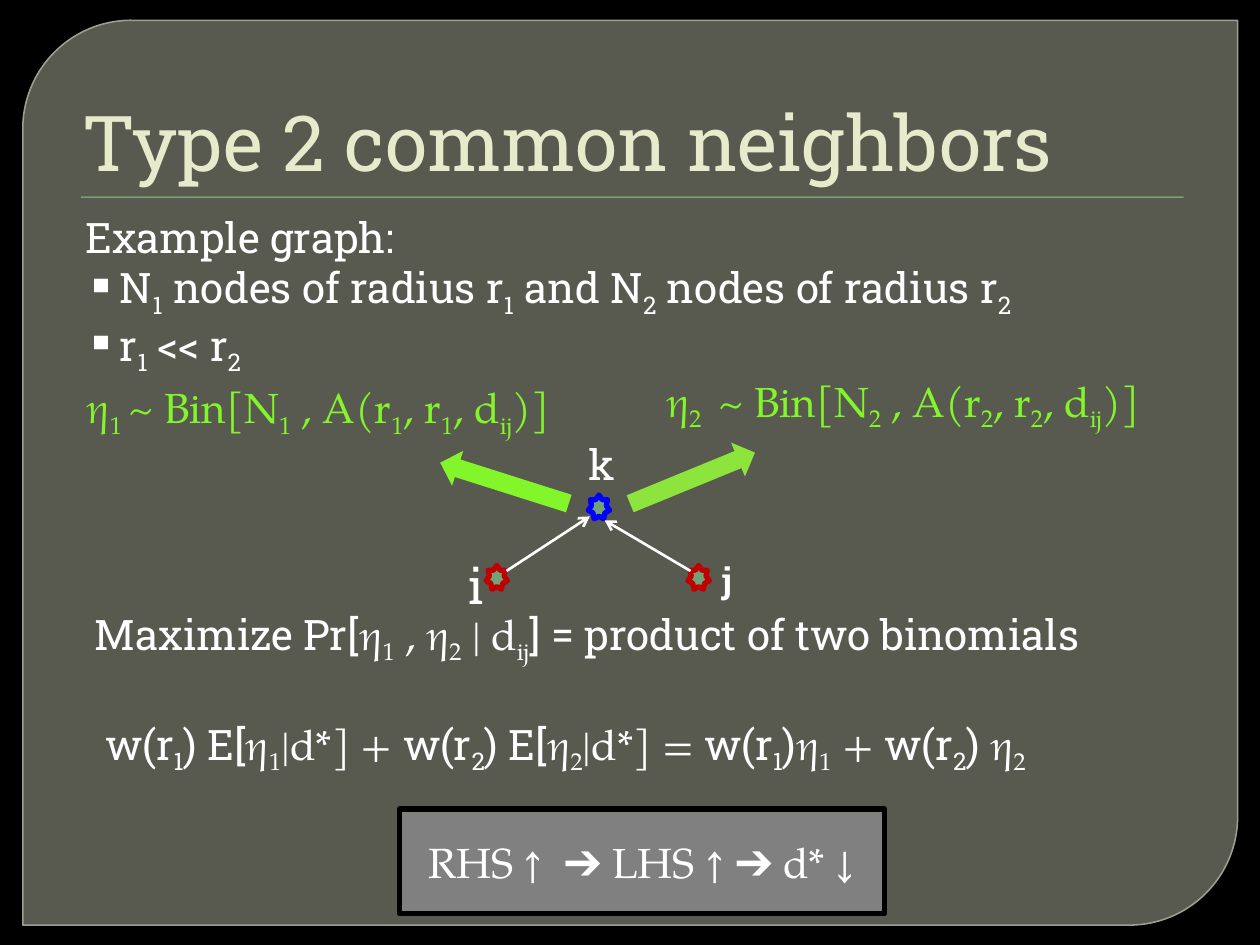
from lxml import etree
from pptx import Presentation
from pptx.dml.color import RGBColor
from pptx.enum.shapes import MSO_CONNECTOR, MSO_SHAPE
from pptx.enum.text import MSO_ANCHOR, PP_ALIGN
from pptx.oxml.ns import qn
from pptx.util import Cm, Pt

RECT = MSO_SHAPE.RECTANGLE
PANEL = MSO_SHAPE.ROUND_2_DIAG_RECTANGLE
STAR = MSO_SHAPE.STAR_7_POINT
ARROW = MSO_SHAPE.LEFT_ARROW
STRAIGHT = MSO_CONNECTOR.STRAIGHT
CENTER = PP_ALIGN.CENTER
TOP, MIDDLE, BOTTOM = MSO_ANCHOR.TOP, MSO_ANCHOR.MIDDLE, MSO_ANCHOR.BOTTOM

SLAB, MATH = "Roboto Slab", "TeX Gyre Pagella"
WHITE, GREEN, SAGE = "FFFFFF", "82F52B", "72A376"


def rgb(value):
    return RGBColor.from_string(value)


def add_text(p, text, size=24, color=WHITE, bold=False, align=None,
             indent=0, bullet=None, before=0):
    """Fill a paragraph; $...$ marks the math font and `...` a subscript."""
    p.alignment = align
    p.space_before = Pt(before)
    pPr = p._p.get_or_add_pPr()
    pPr.set("marL", str(Cm(indent)))
    if bullet:
        pPr.set("indent", str(-Cm(indent)))
        etree.SubElement(pPr, qn("a:buChar"), char=bullet)
    for i, part in enumerate(text.split("$")):
        for j, piece in enumerate(part.split("`")):
            if not piece:
                continue
            r = p.add_run()
            r.text = piece
            r.font.name = MATH if i % 2 else SLAB
            r.font.size = Pt(size)
            r.font.bold = bold
            r.font.color.rgb = rgb(color)
            if j % 2:
                r.font._element.set("baseline", "-25000")


class SlideBuilder:
    def __init__(self, prs, background):
        self.s = prs.slides.add_slide(prs.slide_layouts[6])
        fill = self.s.background.fill
        fill.solid()
        fill.fore_color.rgb = rgb(background)

    def shape(self, kind, x, y, w, h, fill, line=None, weight=3, rotation=0):
        sp = self.s.shapes.add_shape(kind, Cm(x), Cm(y), Cm(w), Cm(h))
        sp.shadow.inherit = False
        sp.rotation = rotation
        sp.fill.solid()
        sp.fill.fore_color.rgb = rgb(fill)
        if line:
            sp.line.color.rgb = rgb(line)
            sp.line.width = Pt(weight)
        else:
            sp.line.fill.background()
        return sp

    def panel(self, x, y, w, h, fill, line, opacity):
        sp = self.shape(PANEL, x, y, w, h, fill, line, 0.87)
        sp.adjustments[0], sp.adjustments[1] = 0.12, 0
        color = sp._element.spPr.find(qn("a:solidFill"))[0]
        etree.SubElement(color, qn("a:alpha"), val=str(opacity * 1000))

    def text(self, x, y, w, h, *paragraphs, anchor=TOP):
        """Add a text box from (text, format) pairs."""
        tf = self.s.shapes.add_textbox(Cm(x), Cm(y), Cm(w), Cm(h)).text_frame
        tf.word_wrap = True
        tf.vertical_anchor = anchor
        for i, (text, style) in enumerate(paragraphs):
            add_text(tf.add_paragraph() if i else tf.paragraphs[0], text, **style)

    def edge(self, x1, y1, x2, y2):
        c = self.s.shapes.add_connector(STRAIGHT, Cm(x1), Cm(y1), Cm(x2), Cm(y2))
        c.line.color.rgb = rgb(WHITE)
        c.line.width = Pt(1.5)
        etree.SubElement(c.line._get_or_add_ln(), qn("a:tailEnd"), type="arrow")
        etree.SubElement(c._element.spPr, qn("a:effectLst"))


def main():
    prs = Presentation()
    prs.slide_width, prs.slide_height = Cm(25.4), Cm(19.05)
    b = SlideBuilder(prs, "000000")

    b.panel(0.46, 0.41, 24.49, 18.24, "888B7B", "9DA090", 65)
    b.shape(RECT, 1.63, 3.96, 22.23, 0.03, SAGE)
    b.text(1.27, 0.71, 22.86, 3.18,
           ("Type 2 common neighbors", dict(size=44, color="E7EACB", indent=0.15)),
           anchor=BOTTOM)

    bullet = dict(bullet="▪", indent=0.7)
    b.text(1.47, 4.14, 21.9, 3.33,
           ("Example graph:", {}),
           ("N`1` nodes of radius r`1` and N`2` nodes of radius r`2`", bullet),
           ("r`1` << r`2`", bullet))

    # Graph: i and j both point to their common neighbor k
    for label, x, y, h, style in (("i", 9.19, 11.07, 1.45, dict(size=28)),
                                  ("j", 14.3, 11.13, 1.12, dict(size=20, bold=True)),
                                  ("k", 11.61, 8.71, 1.27, {})):
        b.text(x, y, 0.86, h, (label, style))
    for x, y, outline in ((9.8, 11.4, "C00000"), (13.87, 11.4, "C00000"),
                          (11.86, 9.98, "0000FF")):
        b.shape(STAR, x, y, 0.43, 0.48, SAGE, outline)
    b.edge(10.21, 11.51, 11.89, 10.41)
    b.edge(13.92, 11.51, 12.19, 10.49)

    # Distribution of each neighbor count
    for n, gap, x, y in (("1", "", 1.5, 7.57), ("2", " ", 13.18, 7.44)):
        b.text(x, y, 10.54, 1.27,
               (f"$η`{n} `{gap}~ Bin[N`{n}` , A(r`{n}`, r`{n}`, d`ij`)]$",
                dict(color=GREEN)))
    b.shape(ARROW, 8.81, 9.37, 2.72, 0.74, GREEN, rotation=17.6)
    b.shape(ARROW, 12.6, 9.27, 2.72, 0.74, "8CE43C", rotation=157.7)

    b.text(0, 12.14, 25.4, 5.74,
           ("Maximize Pr[$η`1` , η`2` | d`ij`$] = product of two binomials",
            dict(indent=1.66)),
           ("w(r`1`) E[$η`1`|d*] + $w(r`2`) E[$η`2`|d*] = $"
            "w(r`1`)$η`1` + $w(r`2`) $η`2`$", dict(indent=1.87, before=30)))

    result = b.shape(RECT, 8.05, 16.31, 9.78, 2.11, "808080", "000000")
    result.text_frame.vertical_anchor = MIDDLE
    add_text(result.text_frame.paragraphs[0], "$RHS ↑  ➔ LHS ↑ ➔ d* ↓$", align=CENTER)

    prs.save("out.pptx")


if __name__ == "__main__":
    main()
